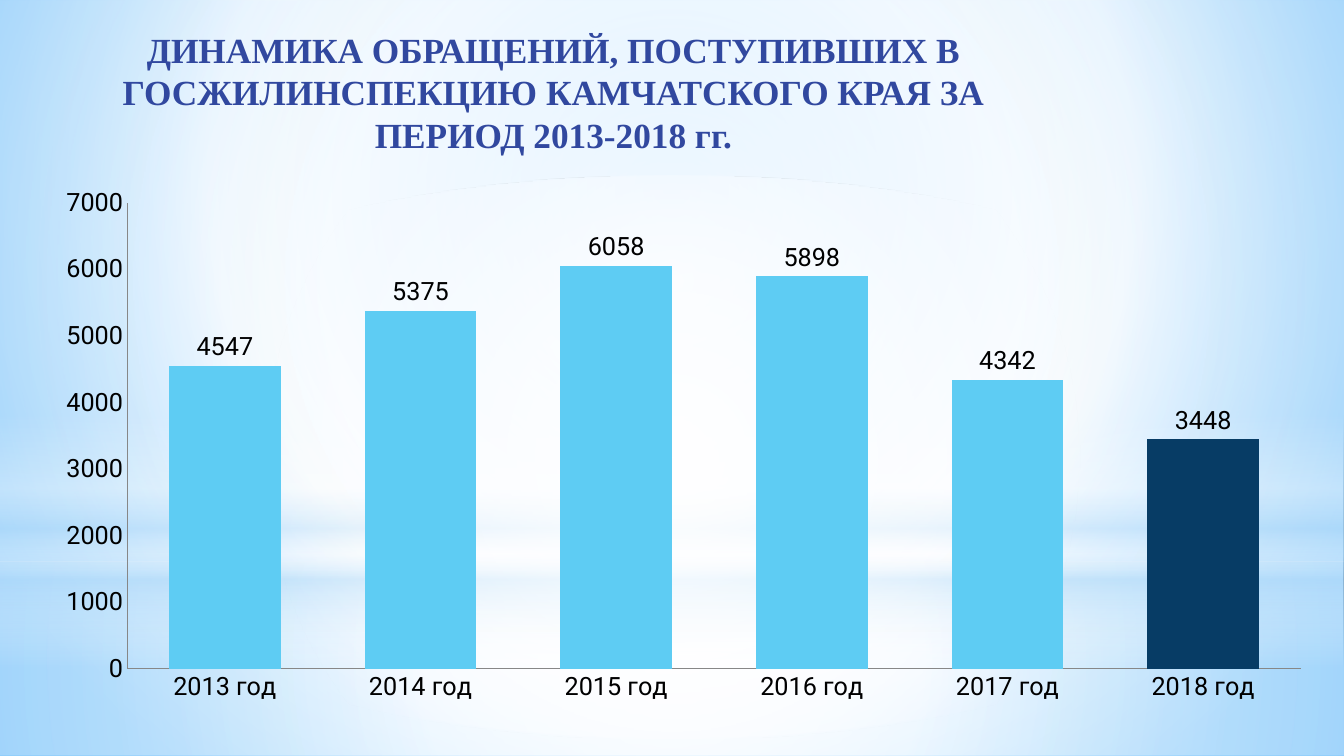
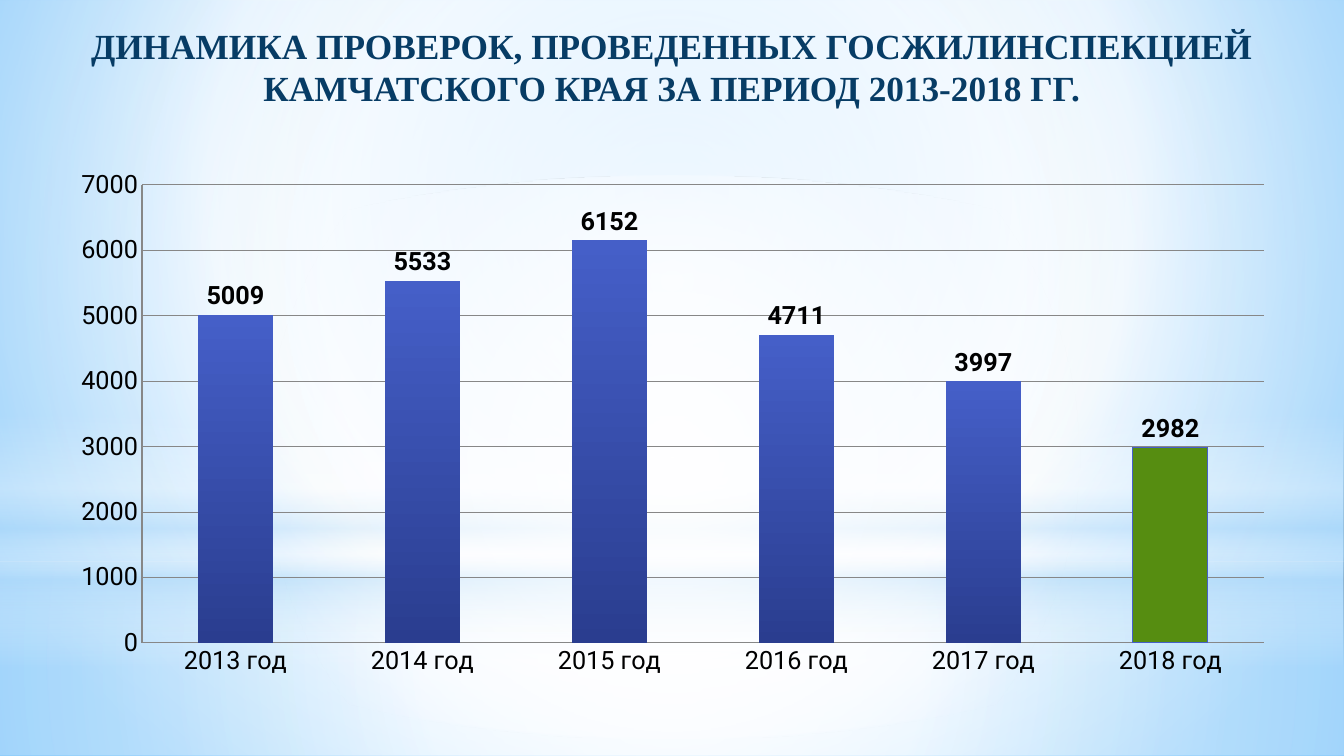
from pptx import Presentation
from pptx.chart.data import CategoryChartData
from pptx.dml.color import RGBColor
from pptx.enum.chart import XL_CHART_TYPE, XL_LABEL_POSITION, XL_TICK_MARK
from pptx.enum.shapes import MSO_SHAPE
from pptx.enum.text import MSO_ANCHOR, MSO_AUTO_SIZE, PP_ALIGN
from pptx.oxml import parse_xml
from pptx.oxml.ns import nsdecls
from pptx.util import Pt

SCALE = 914400 / 100.8
WIDE, HIGH = 1344, 756
WHITE = RGBColor(0xFF, 0xFF, 0xFF)
BLACK = RGBColor(0, 0, 0)
GREY = RGBColor(0x87, 0x87, 0x87)
PALE = RGBColor(0xB4, 0xDC, 0xFA)
LIGHT = RGBColor(0x9E, 0xD5, 0xFF)
AZURE = RGBColor(0x5B, 0xB9, 0xFF)
SKY = RGBColor(0x5E, 0xCC, 0xF3)
NAVY = RGBColor(0x07, 0x3C, 0x65)
INDIGO = RGBColor(0x31, 0x48, 0x9F)
BLUE = RGBColor(0x45, 0x5F, 0xC8)
DEEP = RGBColor(0x2A, 0x3D, 0x8F)
GREEN = RGBColor(0x56, 0x8D, 0x11)
YEARS = [f"{year} год" for year in range(2013, 2019)]
MID = (50, 50, 50, 50)


def px(size):
    """Turn px into EMU."""
    return round(size * SCALE)


def box(rect):
    """Turn a px rectangle into EMU."""
    return [px(size) for size in rect]


def blend(fill, root, stops, focus=None):
    """Give a fill a gradient, radial with a focus, else downward."""
    fill.solid()
    marks = "".join(
        f'<a:gs pos="{pos * 1000}"><a:srgbClr val="{color}">'
        f'<a:alpha val="{alpha * 1000}"/></a:srgbClr></a:gs>'
        for pos, color, alpha in stops)
    if focus:
        sides = " ".join(f'{side}="{part * 1000}"' for side, part in zip("ltrb", focus))
        way = f'<a:path path="circle"><a:fillToRect {sides}/></a:path>'
    else:
        way = '<a:lin ang="5400000" scaled="0"/>'
    old = root.xpath(".//a:solidFill")[0]
    old.getparent().replace(old, parse_xml(
        f'<a:gradFill {nsdecls("a")} rotWithShape="1"><a:gsLst>{marks}</a:gsLst>{way}</a:gradFill>'))


class Deck:
    """Holds the shared style and the current slide."""

    def __init__(self):
        """Start a deck with its backdrop."""
        self.deck = Presentation()
        self.deck.slide_width, self.deck.slide_height = px(WIDE), px(HIGH)
        self.layout = self.deck.slide_layouts[5]
        blend(self.layout.background.fill, self.layout.element,
              [(0, LIGHT, 100), (60, WHITE, 100), (100, AZURE, 100)], (20, 10, 20, 60))

    def add(self):
        """Start a slide."""
        self.slide = self.deck.slides.add_slide(self.layout)

    def glow(self, order, kind, rect, stops, focus=None):
        """Put a soft shape on the layout."""
        shape = self.slide.shapes.add_shape(kind, *box(rect))
        shape.shadow.inherit = False
        blend(shape.fill, shape.element, stops, focus)
        shape.line.fill.background()
        self.layout.shapes.element.insert(2 + order, shape.element)

    def title(self, text, rect, color):
        """Place and format the title."""
        title = self.slide.shapes.title
        title.left, title.top, title.width, title.height = box(rect)
        frame = title.text_frame
        frame.text = text
        frame.word_wrap = True
        frame.auto_size = MSO_AUTO_SIZE.NONE
        frame.vertical_anchor = MSO_ANCHOR.TOP
        para = frame.paragraphs[0]
        para.alignment = PP_ALIGN.CENTER
        font = para.font
        font.name, font.size, font.bold = "Times New Roman", Pt(25.2), True
        font.color.rgb = color

    def chart(self, rect, inner, values, gap, colors, last, grid=False, bold=False):
        """Add a column chart with its last column marked."""
        data = CategoryChartData()
        data.categories = YEARS
        data.add_series("Series 1", values)
        chart = self.slide.shapes.add_chart(
            XL_CHART_TYPE.COLUMN_CLUSTERED, *box(rect), data).chart
        chart.has_legend = chart.has_title = False
        chart.font.name, chart.font.size = "Roboto", Pt(18)
        chart.font.color.rgb = BLACK
        self.frame(chart, rect, inner)
        for axis in (chart.category_axis, chart.value_axis):
            axis.major_tick_mark = axis.minor_tick_mark = XL_TICK_MARK.NONE
            axis.format.line.color.rgb = GREY
            axis.has_major_gridlines = False
        axis.minimum_scale, axis.maximum_scale, axis.major_unit = 0, 7000, 1000
        if grid:
            axis.has_major_gridlines = True
            axis.major_gridlines.format.line.color.rgb = GREY
        plot = chart.plots[0]
        plot.gap_width, plot.vary_by_categories = gap, False
        plot.has_data_labels = True
        labels = plot.data_labels
        labels.show_value = True
        labels.position = XL_LABEL_POSITION.OUTSIDE_END
        labels.font.name, labels.font.size, labels.font.bold = "Roboto", Pt(18), bold
        labels.font.color.rgb = BLACK
        series = plot.series[0]
        fill = series.format.fill
        if len(colors) > 1:
            fill.gradient()
            fill.gradient_angle = 270
            for stop, color in zip(fill.gradient_stops, colors):
                stop.color.rgb = color
        else:
            fill.solid()
            fill.fore_color.rgb = colors[0]
        point = series.points[len(values) - 1].format
        point.fill.solid()
        point.fill.fore_color.rgb = last
        if grid:
            point.line.color.rgb = BLUE

    def frame(self, chart, rect, inner):
        """Fix the inner plot area of a chart."""
        left, top, width, height = rect
        parts = zip("xywh", ((inner[0] - left) / width, (inner[1] - top) / height,
                             inner[2] / width, inner[3] / height))
        sizes = "".join(f'<c:{key} val="{part:.4f}"/>' for key, part in parts)
        area = chart.element.xpath(".//c:plotArea")[0]
        for old in area.xpath("./c:layout"):
            area.remove(old)
        area.insert(0, parse_xml(
            f'<c:layout {nsdecls("c")}><c:manualLayout><c:layoutTarget val="inner"/>'
            f'<c:xMode val="edge"/><c:yMode val="edge"/>{sizes}</c:manualLayout></c:layout>'))


def main():
    """Build the deck."""
    deck = Deck()
    deck.add()
    glows = [
        (MSO_SHAPE.RECTANGLE, (0, 562, WIDE, 194),
         [(0, WHITE, 91), (37, WHITE, 76), (100, PALE, 79)], MID),
        (MSO_SHAPE.RECTANGLE, (0, 0, WIDE, 562),
         [(0, WHITE, 89), (48, WHITE, 62), (100, PALE, 79)], MID),
        (MSO_SHAPE.RECTANGLE, (0, 415, WIDE, 252),
         [(0, WHITE, 0), (29, WHITE, 30), (45, PALE, 40),
          (55, WHITE, 26), (65, PALE, 60), (100, WHITE, 0)]),
        (MSO_SHAPE.OVAL, (0, 176, WIDE, 562), [(0, WHITE, 100), (56, WHITE, 0)], MID),
    ]
    for order, glow in enumerate(glows):
        deck.glow(order, *glow)
    deck.title("ДИНАМИКА ОБРАЩЕНИЙ, ПОСТУПИВШИХ В ГОСЖИЛИНСПЕКЦИЮ "
               "КАМЧАТСКОГО КРАЯ ЗА ПЕРИОД 2013-2018 гг.", (100, 23, 907, 126), INDIGO)
    deck.chart((40, 177, 1286, 536), (127, 203, 1174, 466),
               (4547, 5375, 6058, 5898, 4342, 3448), 75, [SKY], NAVY)
    deck.add()
    deck.title("ДИНАМИКА ПРОВЕРОК, ПРОВЕДЕННЫХ ГОСЖИЛИНСПЕКЦИЕЙ "
               "КАМЧАТСКОГО КРАЯ ЗА ПЕРИОД 2013-2018 ГГ.", (67, 19, 1210, 126), NAVY)
    deck.chart((56, 160, 1232, 527), (142, 185, 1122, 458),
               (5009, 5533, 6152, 4711, 3997, 2982), 150, [BLUE, DEEP], GREEN,
               grid=True, bold=True)
    deck.deck.save("out.pptx")


if __name__ == "__main__":
    main()
